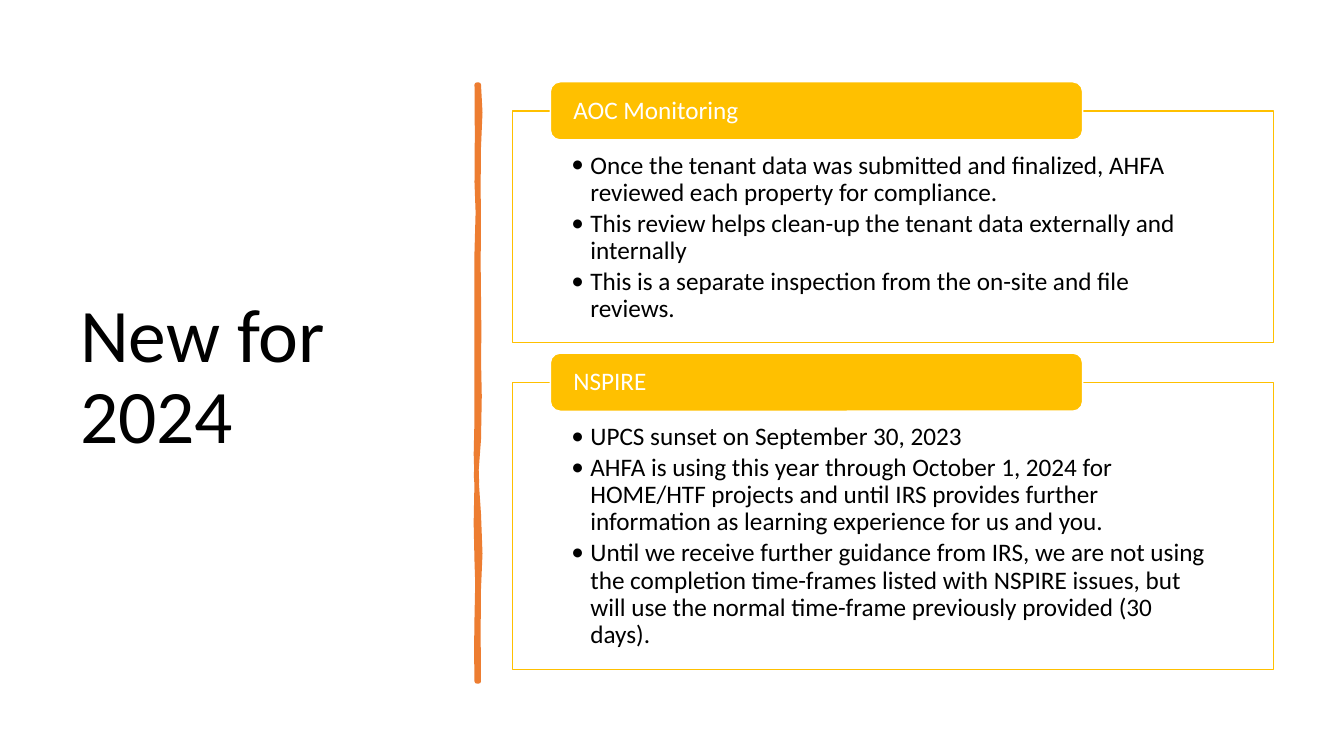
"""Build the "New for 2024" slide with two titled panels of bullets."""
from dataclasses import dataclass

from lxml import etree
from pptx import Presentation
from pptx.dml.color import RGBColor
from pptx.enum.shapes import MSO_SHAPE
from pptx.enum.text import MSO_ANCHOR, MSO_AUTO_SIZE, PP_ALIGN
from pptx.oxml.ns import qn
from pptx.shapes.autoshape import Shape
from pptx.slide import Slide
from pptx.text.text import _Paragraph
from pptx.util import Pt

RECTANGLE, ROUNDED = MSO_SHAPE.RECTANGLE, MSO_SHAPE.ROUNDED_RECTANGLE
TOP, MIDDLE = MSO_ANCHOR.TOP, MSO_ANCHOR.MIDDLE
LEFT = PP_ALIGN.LEFT
NO_AUTOFIT = MSO_AUTO_SIZE.NONE

BLACK = RGBColor(0x00, 0x00, 0x00)
WHITE = RGBColor(0xFF, 0xFF, 0xFF)
GOLD = RGBColor(0xFF, 0xC0, 0x00)
ORANGE = RGBColor(0xED, 0x7D, 0x31)

FONT = "Calibri"
TITLE_SIZE, BODY_SIZE = 54, 18
BULLET_INDENT = 13.5
PANEL_LEFT, PANEL_WIDTH = 366, 543.6
TAB_LEFT, TAB_WIDTH, TAB_HEIGHT = 393.1, 380.2, 41.5
CURVE_STEPS = 2

Point = tuple[float, float]


@dataclass(frozen=True)
class Panel:
    heading: str
    top: float
    height: float
    bullets: tuple[str, ...]


PANELS = (
    Panel("AOC Monitoring", 79.2, 165.4, (
        "Once the tenant data was submitted and finalized, AHFA reviewed each property for compliance.",
        "This review helps clean-up the tenant data externally and internally",
        "This is a separate inspection from the on-site and file reviews.",
    )),
    Panel("NSPIRE", 273, 205.2, (
        "UPCS sunset on September 30, 2023",
        "AHFA is using this year through October 1, 2024 for HOME/HTF projects and until IRS "
        "provides further information as learning experience for us and you.",
        "Until we receive further guidance from IRS, we are not using the completion time-frames "
        "listed with NSPIRE issues, but will use the normal time-frame previously provided (30 days).",
    )),
)

STROKE_START = (342, 60.5)
STROKE_CURVES = (
    ((343.4, 73.4), (343.4, 85.7), (342, 105.1)),
    ((340.6, 124.6), (342.7, 140.4), (342, 162.7)),
    ((341.3, 185), (342, 188.6), (342, 211.7)),
    ((341.3, 234), (343.4, 246.2), (342, 256.3)),
    ((340.6, 266.4), (344.9, 298.1), (342, 313.9)),
    ((339.1, 329), (339.8, 348.5), (342, 367.2)),
    ((343.4, 385.9), (343.4, 406.1), (342, 420.5)),
    ((340.6, 434.2), (342.7, 468), (342, 486.7)),
    ((341.3, 486.7), (340.6, 486.7), (340.6, 486.7)),
    ((341.3, 465.1), (339.1, 463.7), (340.6, 441.4)),
    ((341.3, 419.8), (341.3, 410.4), (340.6, 401)),
    ((339.8, 391.7), (339.8, 356.4), (340.6, 343.4)),
    ((340.6, 330.5), (339.1, 320.4), (340.6, 298.8)),
    ((341.3, 277.9), (339.8, 268.6), (340.6, 241.2)),
    ((341.3, 214.6), (339.8, 202.3), (340.6, 180)),
    ((341.3, 157), (342, 144), (340.6, 130.3)),
    ((338.4, 117.4), (343.4, 74.9), (340.6, 60.5)),
)


def style_shape(shape: Shape, fill: RGBColor, line: RGBColor, line_width: float) -> None:
    shape.shadow.inherit = False
    shape.fill.solid()
    shape.fill.fore_color.rgb = fill
    shape.line.color.rgb = line
    shape.line.width = Pt(line_width)


def set_frame(shape: Shape, anchor: MSO_ANCHOR, side: float, top: float, bottom: float) -> None:
    frame = shape.text_frame
    frame.word_wrap = True
    frame.auto_size = NO_AUTOFIT
    frame.vertical_anchor = anchor
    frame.margin_left = frame.margin_right = Pt(side)
    frame.margin_top, frame.margin_bottom = Pt(top), Pt(bottom)


def style_paragraph(para: _Paragraph, size: float, color: RGBColor) -> None:
    para.alignment = LEFT
    para.line_spacing = 0.9
    para.font.name = FONT
    para.font.size = Pt(size)
    para.font.color.rgb = color


def add_bullet(para: _Paragraph) -> None:
    properties = para._p.get_or_add_pPr()
    properties.set("marL", str(Pt(BULLET_INDENT)))
    properties.set("indent", str(-Pt(BULLET_INDENT)))
    run_defaults = properties.find(qn("a:defRPr"))
    run_defaults.addprevious(etree.Element(qn("a:buSzPct"), val="100000"))
    run_defaults.addprevious(etree.Element(qn("a:buFont"), typeface=FONT))
    run_defaults.addprevious(etree.Element(qn("a:buChar"), char="•"))


def curve_points(start: Point, first: Point, second: Point, end: Point) -> list[Point]:
    points = []
    for step in range(1, CURVE_STEPS + 1):
        t = step / CURVE_STEPS
        weights = ((1 - t) ** 3, 3 * t * (1 - t) ** 2, 3 * t * t * (1 - t), t ** 3)
        x, y = (
            sum(weight * value for weight, value in zip(weights, axis))
            for axis in zip(start, first, second, end)
        )
        points.append((Pt(x), Pt(y)))
    return points


def draw_brush_stroke(page: Slide) -> None:
    builder = page.shapes.build_freeform(Pt(STROKE_START[0]), Pt(STROKE_START[1]))
    start = STROKE_START
    for first, second, end in STROKE_CURVES:
        builder.add_line_segments(curve_points(start, first, second, end), close=False)
        start = end
    builder.add_line_segments([], close=True)
    style_shape(builder.convert_to_shape(), ORANGE, ORANGE, 3.25)


def draw_panel(page: Slide, panel: Panel) -> None:
    box = page.shapes.add_shape(
        RECTANGLE, Pt(PANEL_LEFT), Pt(panel.top), Pt(PANEL_WIDTH), Pt(panel.height))
    style_shape(box, WHITE, GOLD, 1)
    set_frame(box, TOP, 42.2, 29.6, 10)
    box.text_frame.text = "\n".join(panel.bullets)
    for para in box.text_frame.paragraphs:
        style_paragraph(para, BODY_SIZE, BLACK)
        para.space_after = Pt(2.7)
        add_bullet(para)

    tab = page.shapes.add_shape(
        ROUNDED, Pt(TAB_LEFT), Pt(panel.top - TAB_HEIGHT / 2), Pt(TAB_WIDTH), Pt(TAB_HEIGHT))
    style_shape(tab, GOLD, WHITE, 1)
    set_frame(tab, MIDDLE, 14.4, 0, 0)
    tab.text_frame.text = panel.heading
    style_paragraph(tab.text_frame.paragraphs[0], BODY_SIZE, WHITE)


def draw_title(page: Slide) -> None:
    title = page.shapes.title
    title.left, title.top, title.width, title.height = Pt(50), Pt(50.4), Pt(269.3), Pt(440)
    set_frame(title, MIDDLE, 7.2, 3.6, 3.6)
    title.text_frame.text = "New for 2024"
    style_paragraph(title.text_frame.paragraphs[0], TITLE_SIZE, BLACK)


def main() -> None:
    deck = Presentation()
    deck.slide_width, deck.slide_height = Pt(960), Pt(540)
    page = deck.slides.add_slide(deck.slide_layouts.get_by_name("Title Only"))
    draw_title(page)
    draw_brush_stroke(page)
    for panel in PANELS:
        draw_panel(page, panel)
    deck.save("out.pptx")


if __name__ == "__main__":
    main()
